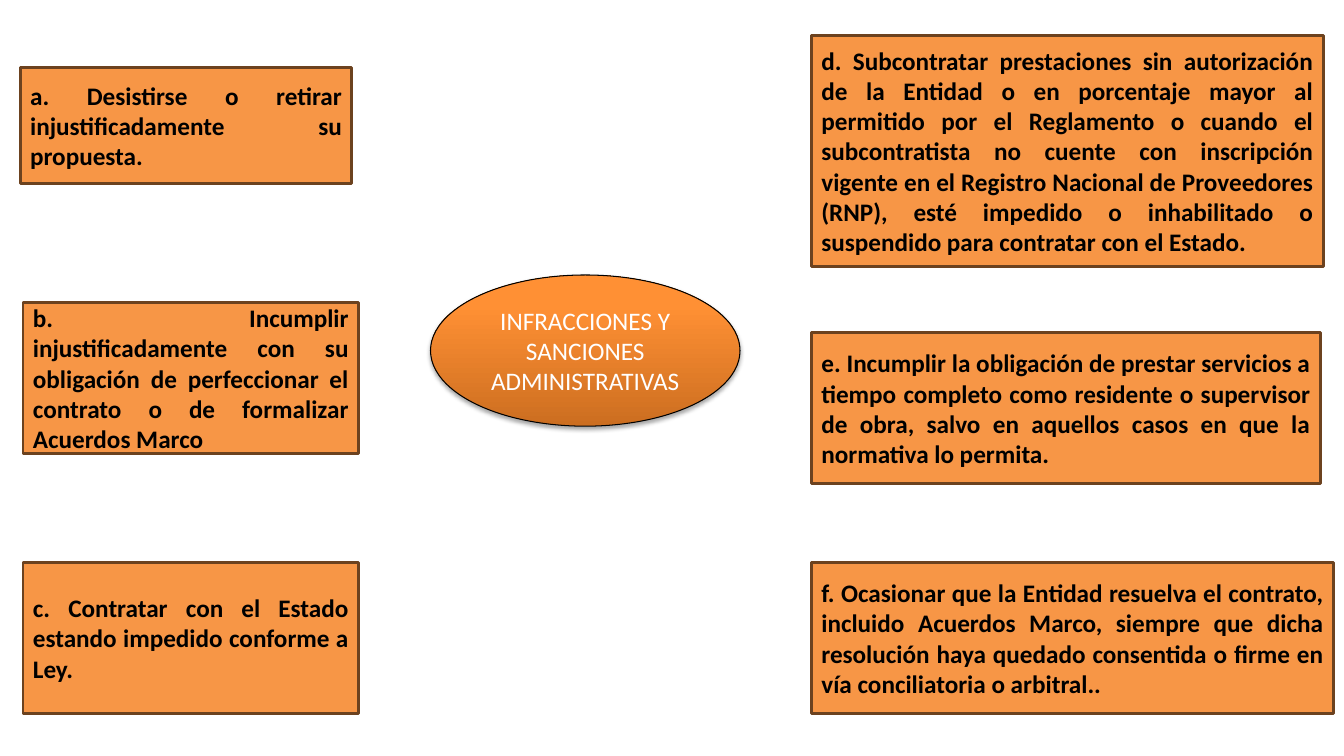
from copy import deepcopy

from lxml import etree
from pptx import Presentation
from pptx import util as u
from pptx.dml.color import RGBColor
from pptx.enum import shapes, text
from pptx.oxml import ns

TOPIC = "INFRACCIONES Y SANCIONES ADMINISTRATIVAS"
TOPIC_PLACE = (10.85, 6.93, 7.8, 3.81)
TOPIC_GRADIENT = [(0, "CC6E20"), (0.8, "FF9034"), (1, "FF9136")]

# Left, top, width, height in cm, then the wording
INFRACTIONS = [
    (0.51, 1.7, 8.36, 2.92,
     "a. Desistirse o retirar injustificadamente su propuesta."),
    (0.58, 7.62, 8.46, 3.81,
     "b. Incumplir injustificadamente con su obligación de perfeccionar el "
     "contrato o de formalizar Acuerdos Marco"),
    (0.58, 14.17, 8.46, 3.81,
     "c. Contratar con el Estado estando impedido conforme a Ley."),
    (20.45, 0.89, 12.9, 5.82,
     "d. Subcontratar prestaciones sin autorización de la Entidad o en "
     "porcentaje mayor al permitido por el Reglamento o cuando el "
     "subcontratista no cuente con inscripción vigente en el Registro "
     "Nacional de Proveedores (RNP), esté impedido o inhabilitado o "
     "suspendido para contratar con el Estado."),
    (20.45, 8.38, 12.83, 3.81,
     "e. Incumplir la obligación de prestar servicios a tiempo completo como "
     "residente o supervisor de obra, salvo en aquellos casos en que la "
     "normativa lo permita."),
    (20.45, 14.17, 13.16, 3.81,
     "f. Ocasionar que la Entidad resuelva el contrato, incluido Acuerdos "
     "Marco, siempre que dicha resolución haya quedado consentida o firme en "
     "vía conciliatoria o arbitral.."),
]


def color(hex_code):
    return RGBColor.from_string(hex_code)


def add_box(page, kind, place, wording, ink, align, bold, border, border_width):
    box = page.shapes.add_shape(kind, *map(u.Cm, place))
    box.shadow.inherit = False
    box.line.color.rgb = color(border)
    box.line.width = u.Pt(border_width)
    frame = box.text_frame
    frame.word_wrap = True
    frame.vertical_anchor = text.MSO_ANCHOR.MIDDLE
    frame.text = wording
    para = frame.paragraphs[0]
    para.alignment = align
    font = para.runs[0].font
    font.name, font.size, font.bold = "Calibri", u.Pt(18), bold
    font.color.rgb = color(ink)
    return box


def fill_gradient(box, stops, angle):
    box.fill.gradient()
    box.fill.gradient_angle = angle
    stop_list = box.fill._xPr.find(".//" + ns.qn("a:gsLst"))
    while len(stop_list) < len(stops):
        stop_list.append(deepcopy(stop_list[0]))
    for stop, (position, hex_code) in zip(box.fill.gradient_stops, stops):
        stop.position = position
        stop.color.rgb = color(hex_code)


def add_shadow(box, blur, distance, opacity):
    """Cast a black shadow straight down."""
    effects = box._element.spPr.find(ns.qn("a:effectLst"))
    shadow = etree.SubElement(
        effects, ns.qn("a:outerShdw"), blurRad=str(u.Pt(blur)),
        dist=str(u.Pt(distance)), dir="5400000", rotWithShape="0")
    shade = etree.SubElement(shadow, ns.qn("a:srgbClr"), val="000000")
    etree.SubElement(shade, ns.qn("a:alpha"), val=str(opacity * 1000))


deck = Presentation()
deck.slide_width, deck.slide_height = u.Cm(33.87), u.Cm(19.05)
page = deck.slides.add_slide(deck.slide_layouts[6])

topic = add_box(page, shapes.MSO_SHAPE.OVAL, TOPIC_PLACE, TOPIC, "FFFFFF",
                text.PP_ALIGN.CENTER, False, "000000", 0.75)
fill_gradient(topic, TOPIC_GRADIENT, 90)
add_shadow(topic, 3.1, 1.8, 35)

for *place, wording in INFRACTIONS:
    box = add_box(page, shapes.MSO_SHAPE.RECTANGLE, place, wording, "000000",
                  text.PP_ALIGN.JUSTIFY, True, "6C421F", 2)
    box.fill.solid()
    box.fill.fore_color.rgb = color("F79646")

deck.save("out.pptx")
